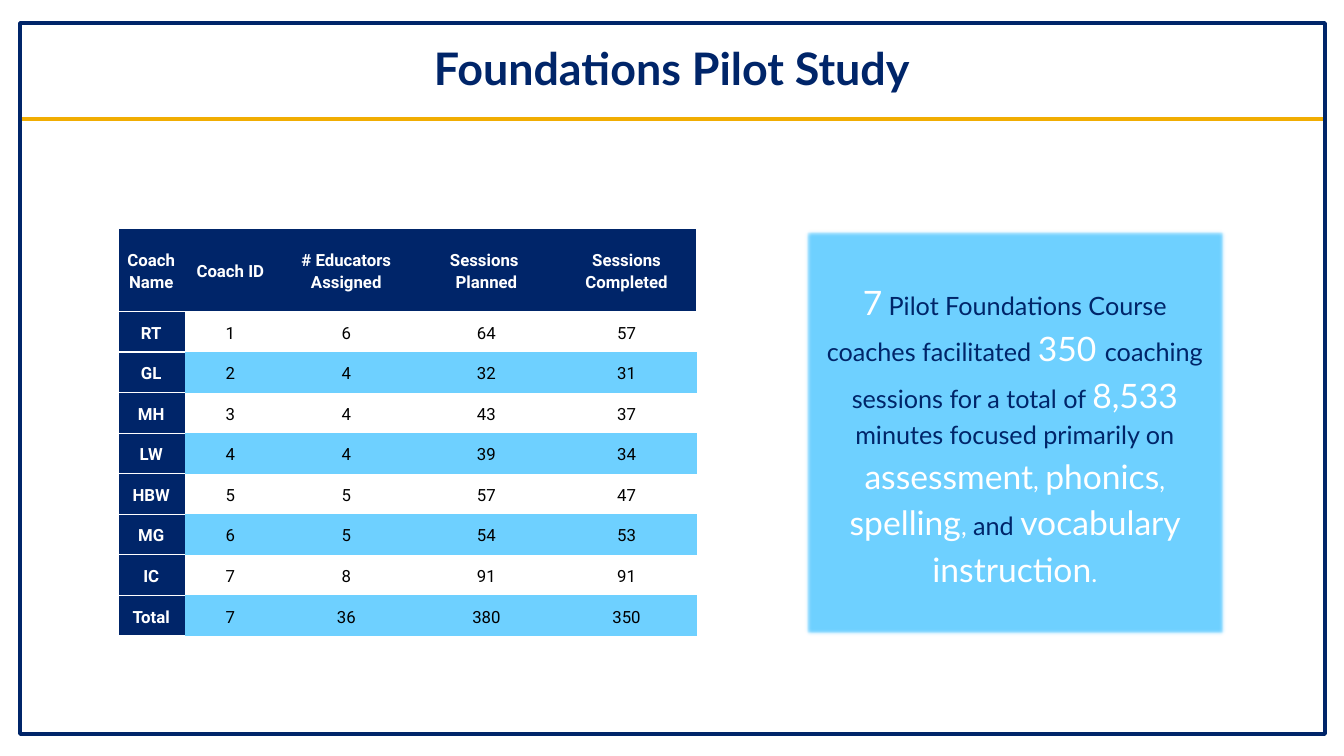
import lxml.etree
import pptx
import pptx.dml.color
import pptx.enum.shapes
import pptx.enum.text
import pptx.oxml.ns
import pptx.util

Inches = pptx.util.Inches
Pt = pptx.util.Pt
qn = pptx.oxml.ns.qn

COLORS = {"navy": "002569", "gold": "F1AD02", "sky": "6ED0FF", "white": "FFFFFF", "black": "000000"}


def rgb(name):
    return pptx.dml.color.RGBColor.from_string(COLORS[name])


def write(frame, text, font="Lato", size=18, color="navy", bold=False,
          spacing=1.0, before=0, after=0, margins=(0.1, 0.05)):
    frame.word_wrap = True
    frame.vertical_anchor = pptx.enum.text.MSO_ANCHOR.MIDDLE
    frame.margin_left = frame.margin_right = Inches(margins[0])
    frame.margin_top = frame.margin_bottom = Inches(margins[1])
    lines = text.split("\n") if isinstance(text, str) else [text]
    for number, line in enumerate(lines):
        paragraph = frame.add_paragraph() if number else frame.paragraphs[0]
        paragraph.alignment = pptx.enum.text.PP_ALIGN.CENTER
        paragraph.line_spacing = spacing
        paragraph.space_before = Pt(0 if number else before)
        paragraph.space_after = Pt(after if number == len(lines) - 1 else 0)
        pieces = [(line, size, color)] if isinstance(line, str) else line
        for words, points, tint in pieces:
            run = paragraph.add_run()
            run.text = words
            run.font.name = font
            run.font.size = Pt(points)
            run.font.bold = bold
            run.font.color.rgb = rgb(tint)


presentation = pptx.Presentation()
presentation.slide_width = Inches(13.33)
presentation.slide_height = Inches(7.5)
slide = presentation.slides.add_slide(presentation.slide_layouts[6])
shapes = slide.shapes
RECTANGLE = pptx.enum.shapes.MSO_SHAPE.RECTANGLE

title = shapes.add_textbox(Inches(1.46), Inches(0.33), Inches(10.41), Inches(0.75))
write(title.text_frame, "Foundations Pilot Study", size=32, bold=True, spacing=0.9)

title_rule = shapes.add_connector(
    pptx.enum.shapes.MSO_CONNECTOR.STRAIGHT, Inches(0.22), Inches(1.18), Inches(13.12), Inches(1.18))
title_rule.line.color.rgb = rgb("gold")
title_rule.line.width = Pt(3)
lxml.etree.SubElement(title_rule._element.spPr, qn("a:effectLst"))

border = shapes.add_shape(RECTANGLE, Inches(0.2), Inches(0.23), Inches(12.94), Inches(7.05))
border.shadow.inherit = False
border.fill.background()
border.line.color.rgb = rgb("navy")
border.line.width = Pt(3)

summary = shapes.add_shape(RECTANGLE, Inches(7.97), Inches(2.27), Inches(4.19), Inches(4.04))
summary.fill.solid()
summary.fill.fore_color.rgb = rgb("sky")
summary.line.color.rgb = rgb("gold")
summary.line.width = Pt(0.75)
summary.shadow.inherit = False
effects = summary._element.spPr.find(qn("a:effectLst"))
lxml.etree.SubElement(effects, qn("a:softEdge"), rad=str(Pt(2.5)))
write(summary.text_frame, [
    ("7", 24, "white"),
    (" Pilot Foundations Course coaches facilitated ", 18, "navy"),
    ("350 ", 24, "white"),
    ("coaching sessions for a total of ", 18, "navy"),
    ("8,533", 24, "white"),
    (" minutes focused primarily on ", 18, "navy"),
    ("assessment", 24, "white"),
    (", ", 18, "white"),
    ("phonics", 24, "white"),
    (", ", 18, "white"),
    ("spelling", 24, "white"),
    (", ", 18, "white"),
    ("and ", 18, "navy"),
    ("vocabulary instruction", 24, "white"),
    (".", 18, "white"),
], spacing=1.15, after=8, margins=(0.2, 0.1))

coaches = [
    ("Coach Name", "Coach ID", "# Educators Assigned", "Sessions \nPlanned", "Sessions Completed"),
    ("RT", "1", "6", "64", "57"),
    ("GL", "2", "4", "32", "31"),
    ("MH", "3", "4", "43", "37"),
    ("LW", "4", "4", "39", "34"),
    ("HBW", "5", "5", "57", "47"),
    ("MG", "6", "5", "54", "53"),
    ("IC", "7", "8", "91", "91"),
    ("Total", "7", "36", "380", "350"),
]
column_widths = [0.66, 0.91, 1.39, 1.39, 1.39]
table_height, header_height = 4.04, 0.82
coach_table = shapes.add_table(
    len(coaches), len(column_widths), Inches(1.17), Inches(2.27),
    Inches(sum(column_widths)), Inches(table_height)).table
coach_table.horz_banding = False
NO_GRID_STYLE = "{2D5ABB26-0587-4C30-8999-92F81FD0307C}"
coach_table._tbl.tblPr.find(qn("a:tableStyleId")).text = NO_GRID_STYLE

for column, width in zip(coach_table.columns, column_widths):
    column.width = Inches(width)

for r, coach in enumerate(coaches):
    coach_table.rows[r].height = Inches(
        (table_height - header_height) / (len(coaches) - 1) if r else header_height)
    for c, value in enumerate(coach):
        cell = coach_table.cell(r, c)
        heading = r == 0 or c == 0
        write(cell.text_frame, value, font="Roboto", size=12, bold=heading,
              color="white" if heading else "black", spacing=1.16, before=6, after=6)
        cell.vertical_anchor = pptx.enum.text.MSO_ANCHOR.MIDDLE
        cell.margin_left = cell.margin_right = Inches(0.07)
        cell.margin_top = cell.margin_bottom = 0
        sides = {"lnL": c == 0, "lnR": r == 0 and c == len(coach) - 1, "lnT": heading, "lnB": c == 0}
        for side, shown in sides.items():
            if shown:
                edge = lxml.etree.SubElement(cell._tc.get_or_add_tcPr(), qn("a:" + side), w=str(Pt(1)))
                paint = lxml.etree.SubElement(edge, qn("a:solidFill"))
                lxml.etree.SubElement(paint, qn("a:srgbClr"), val=COLORS["white"])
        if heading or r % 2 == 0:
            cell.fill.solid()
            cell.fill.fore_color.rgb = rgb("navy" if heading else "sky")
        else:
            cell.fill.background()

presentation.save("out.pptx")
